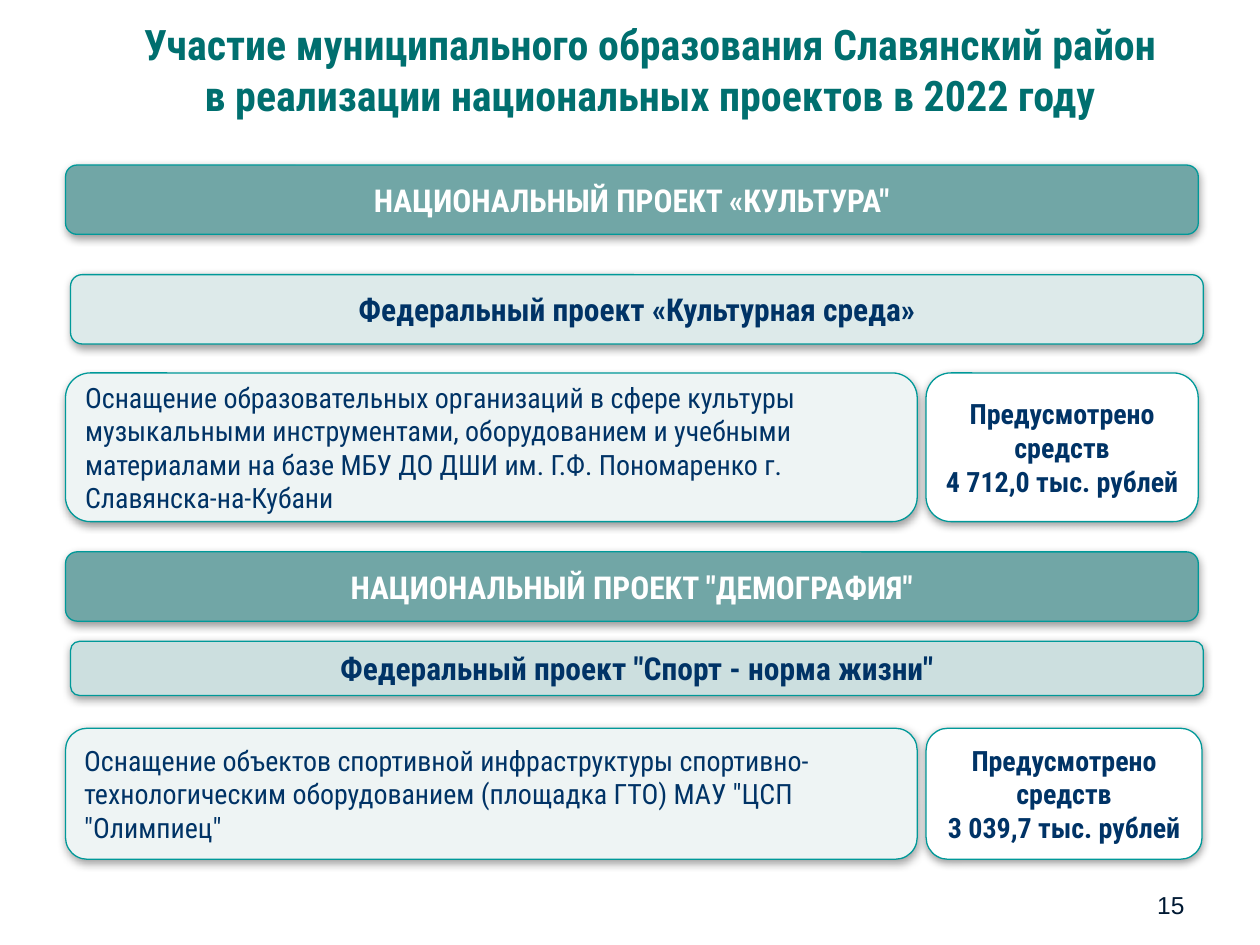
from lxml.etree import SubElement
from pptx import Presentation
from pptx.dml.color import RGBColor
from pptx.enum.shapes import MSO_SHAPE
from pptx.enum.text import MSO_ANCHOR, MSO_AUTO_SIZE, PP_ALIGN
from pptx.oxml.ns import qn
from pptx.util import Pt

SCALE = 9144
FONT = "Roboto Condensed"
TEAL, PALE, WHITE, NAVY = "71A6A6", "EEF4F4", "FFFFFF", "003366"


def px(length):
    """Turn px, at 100 to the inch, into EMU."""
    return length * SCALE


def color(value):
    """Turn a hex string into a colour."""
    return RGBColor.from_string(value)


def write(shape, text, size, font_color, bold=True, align=PP_ALIGN.CENTER,
          anchor=MSO_ANCHOR.MIDDLE, font=FONT):
    """Set the text of a shape and format its runs."""
    frame = shape.text_frame
    frame.text = text
    frame.word_wrap = True
    frame.auto_size = MSO_AUTO_SIZE.NONE
    frame.vertical_anchor = anchor
    for paragraph in frame.paragraphs:
        paragraph.alignment = align
        for run in paragraph.runs:
            run.font.name = font
            run.font.size = Pt(size)
            run.font.bold = bold
            run.font.color.rgb = color(font_color)


def add_shadow(shape):
    """Give a shape a soft shadow below it."""
    shape.shadow.inherit = False
    effects = shape.element.spPr.find(qn("a:effectLst"))
    shadow = SubElement(effects, qn("a:outerShdw"), blurRad=str(Pt(5)),
                        dist=str(Pt(1.6)), dir="5400000", rotWithShape="0")
    shadow_color = SubElement(shadow, qn("a:srgbClr"), val="000000")
    SubElement(shadow_color, qn("a:alpha"), val="38000")


def add_panel(slide, left, top, width, height, fill, text, size=18, **style):
    """Draw a rounded panel with its text."""
    panel = slide.shapes.add_shape(MSO_SHAPE.ROUNDED_RECTANGLE,
                                   px(left), px(top), px(width), px(height))
    panel.fill.solid()
    panel.fill.fore_color.rgb = color(fill)
    panel.line.color.rgb = color("009999")
    panel.line.width = Pt(0.75)
    add_shadow(panel)
    write(panel, text, size, WHITE if fill == TEAL else NAVY, **style)


def add_project(slide, left, top, national, federal, federal_box, federal_fill,
                task, amount, row_box, amount_width):
    """Draw a national project with its federal project, task and funding."""
    federal_top, federal_height = federal_box
    row_top, row_height = row_box
    add_panel(slide, left, top, 899, 55, TEAL, national)
    add_panel(slide, left + 4, top + federal_top, 899, federal_height,
              federal_fill, federal)
    add_panel(slide, left, top + row_top, 676, row_height, PALE, task, 16,
              bold=False, align=PP_ALIGN.LEFT)
    add_panel(slide, left + 683, top + row_top, amount_width, row_height, WHITE,
              f"Предусмотрено средств\n{amount} тыс. рублей", 16)


def add_title(slide, left, top, width, height):
    """Place and format the slide title."""
    title = slide.shapes.title
    title.left, title.top = px(left), px(top)
    title.width, title.height = px(width), px(height)
    write(title, "Участие муниципального образования Славянский район\n"
          "в реализации национальных проектов в 2022 году", 24, "006F6F",
          anchor=MSO_ANCHOR.TOP)


def add_page_number(slide, left, top, width, height):
    """Place the page number."""
    box = slide.shapes.add_textbox(px(left), px(top), px(width), px(height))
    write(box, "15", 14, "001933", bold=False, align=PP_ALIGN.RIGHT,
          anchor=MSO_ANCHOR.BOTTOM, font="Arial")


def main():
    """Build and save the slide."""
    presentation = Presentation()
    presentation.slide_width, presentation.slide_height = px(1000), px(750)
    slide = presentation.slides.add_slide(presentation.slide_layouts[5])
    add_title(slide, 52, 10, 928, 91)
    add_project(
        slide, 52, 131, "НАЦИОНАЛЬНЫЙ ПРОЕКТ «КУЛЬТУРА\"",
        "Федеральный проект «Культурная среда»", (87, 55), "DDEAEA",
        "Оснащение образовательных организаций в сфере культуры музыкальными "
        "инструментами, оборудованием и учебными материалами на базе МБУ ДО "
        "ДШИ им. Г.Ф. Пономаренко г. Славянска-на-Кубани",
        "4 712,0", (165, 118), 216)
    add_project(
        slide, 52, 438, "НАЦИОНАЛЬНЫЙ ПРОЕКТ \"ДЕМОГРАФИЯ\"",
        "Федеральный проект \"Спорт - норма жизни\"", (71, 43), "CCDFDF",
        "Оснащение объектов спортивной инфраструктуры "
        "спортивно-технологическим оборудованием (площадка ГТО) МАУ \"ЦСП "
        "\"Олимпиец\"",
        "3 039,7", (140, 104), 219)
    add_page_number(slide, 717, 683, 233, 52)
    presentation.save("out.pptx")


if __name__ == "__main__":
    main()
